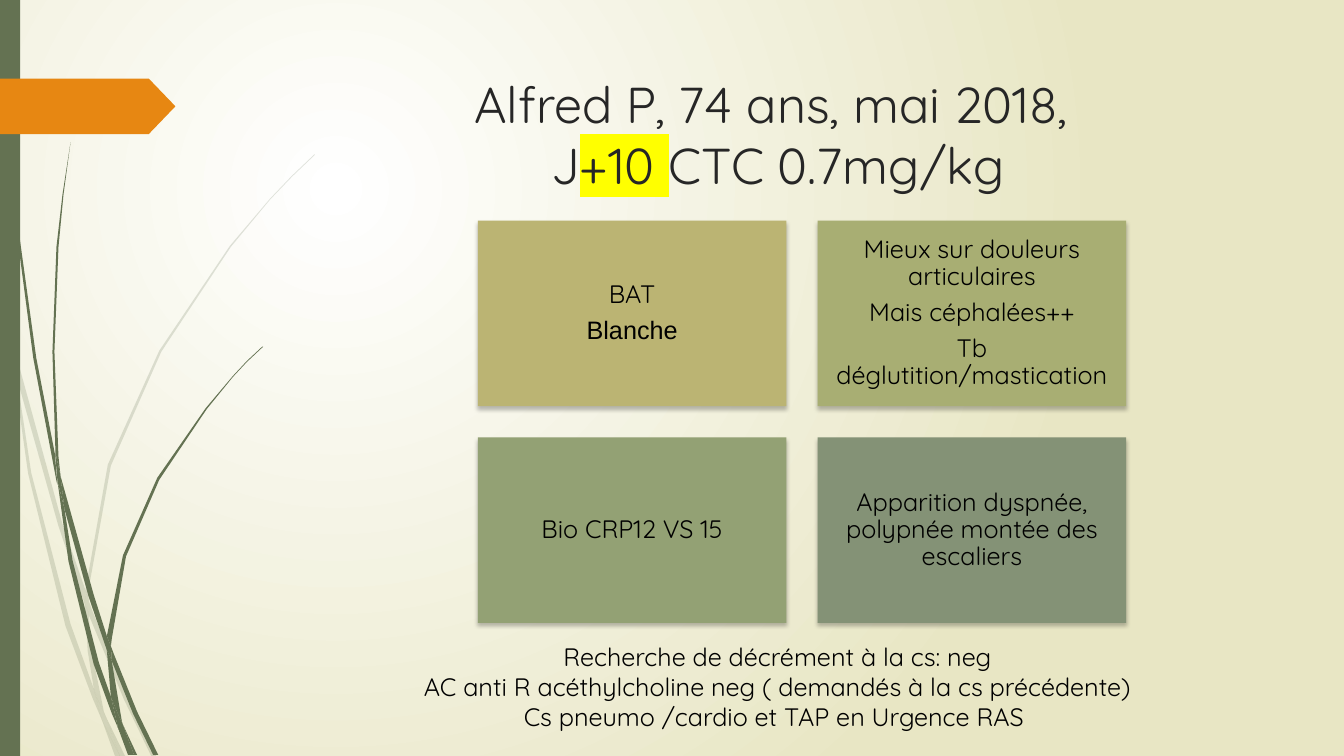
from dataclasses import dataclass

from lxml.etree import SubElement
from pptx import Presentation
from pptx.dml.color import RGBColor
from pptx.enum.shapes import MSO_SHAPE as SHAPE
from pptx.enum.text import MSO_ANCHOR as ANCHOR, MSO_AUTO_SIZE as AUTO, PP_ALIGN as ALIGN
from pptx.oxml.ns import qn
from pptx.util import Inches, Pt

WHITE = RGBColor(0xFF, 0xFF, 0xFF)
CREAM = RGBColor(0xE8, 0xE6, 0xC4)
GREEN = RGBColor(0x64, 0x72, 0x52)
ORANGE = RGBColor(0xE7, 0x87, 0x12)
DARK = RGBColor(0x26, 0x26, 0x26)
BLACK = RGBColor(0x00, 0x00, 0x00)
FONT = "Quicksand"

Outline = list[tuple[float, float]]


@dataclass
class Card:
    color: RGBColor
    lines: list[tuple[str, str]]


@dataclass
class Grass:
    alpha: int
    blades: list[Outline]


PALE_GRASS = Grass(20, [
    [(0.11, 3.5), (0.09, 3.22), (0, 2.82), (0, 2.99), (0.1, 3.44)],
    [(0.58, 5.22), (0.84, 5.99), (0.85, 5.86), (0.62, 5.2), (0.14, 3.45), (0.17, 3.76)],
    [(0.92, 6.07), (0.88, 5.96), (0.88, 6.1), (1.23, 6.94), (1.5, 7.5), (1.55, 7.5),
     (1.27, 6.92)],
    [(1.19, 7.5), (1.24, 7.5), (1.05, 7.11)],
    [(0.93, 6.83), (0.7, 6.19), (0.31, 4.69), (0.17, 3.76), (0.11, 3.5), (0.28, 4.7),
     (0.65, 6.21), (0.92, 6.93), (1.01, 7.14), (0.99, 7.07)],
    [(0.84, 5.99), (0.87, 6.46), (0.93, 6.83), (0.96, 6.92), (1.05, 7.11), (1.03, 7.06),
     (0.91, 6.46), (0.88, 6.1), (0.88, 6.08)],
    [(0.88, 5.84), (1.1, 4.62), (1.6, 3.49), (2.29, 2.45), (2.68, 1.98), (2.9, 1.75),
     (3.12, 1.54), (3.12, 1.53), (2.89, 1.75), (2.68, 1.97), (2.28, 2.44), (1.58, 3.48),
     (1.07, 4.61), (0.85, 5.84), (0.85, 5.86), (0.88, 5.96)],
    [(1.01, 7.14), (1.14, 7.5), (1.19, 7.5)],
    [(0.88, 6.08), (0.88, 6.1), (0.88, 5.96), (0.85, 5.86), (0.84, 5.99)],
    [(0.96, 6.92), (0.93, 6.83), (0.99, 7.07), (1.01, 7.14), (1.19, 7.5), (1.05, 7.11)],
])

DARK_GRASS = Grass(100, [
    [(0.07, 1.1), (0.17, 2.33), (0.33, 3.55), (0.56, 4.77), (0.57, 4.81), (0.55, 4.57),
     (0.55, 4.53), (0.36, 3.55), (0.19, 2.32), (0.08, 1.09), (0.05, 0.48), (0.04, 0),
     (0.03, 0), (0.04, 0.48)],
    [(0.88, 5.92), (1.06, 6.45), (1.06, 6.33), (1.06, 6.31), (0.93, 5.9), (0.6, 4.72),
     (0.64, 5.05)],
    [(1.13, 6.49), (1.1, 6.41), (1.11, 6.56), (1.32, 7.08), (1.52, 7.49), (1.57, 7.49),
     (1.36, 7.06)],
    [(1.1, 6.91), (0.98, 6.57), (0.72, 5.56), (0.64, 5.05), (0.57, 4.77), (0.68, 5.57),
     (0.93, 6.59), (1.11, 7.08), (1.17, 7.22), (1.16, 7.17)],
    [(0.6, 4.72), (0.58, 4.53), (0.54, 3.49), (0.58, 2.45), (0.63, 1.93), (0.7, 1.41),
     (0.62, 1.93), (0.56, 2.45), (0.52, 3.49), (0.55, 4.49)],
    [(1.33, 7.49), (1.36, 7.49), (1.22, 7.19)],
    [(0.57, 4.77), (0.64, 5.05), (0.6, 4.72), (0.55, 4.49), (0.55, 4.53)],
    [(1.11, 6.33), (1.25, 5.52), (1.58, 4.76), (2.05, 4.06), (2.31, 3.74), (2.45, 3.59),
     (2.61, 3.44), (2.6, 3.44), (2.45, 3.58), (2.31, 3.73), (2.04, 4.05), (1.56, 4.74),
     (1.22, 5.51), (1.06, 6.31), (1.1, 6.41)],
    [(1.17, 7.22), (1.27, 7.49), (1.31, 7.49)],
    [(1.06, 6.45), (1.1, 6.91), (1.16, 7.06), (1.22, 7.19), (1.21, 7.16), (1.11, 6.56),
     (1.09, 6.51)],
    [(1.06, 6.45), (1.09, 6.51), (1.11, 6.56), (1.1, 6.41), (1.06, 6.31), (1.06, 6.33)],
    [(1.16, 7.06), (1.1, 6.91), (1.16, 7.17), (1.17, 7.22), (1.3, 7.49), (1.33, 7.49),
     (1.22, 7.19)],
])

CARDS = [
    Card(RGBColor(0xBB, 0xB4, 0x73), [("BAT", FONT), ("Blanche", "Arial")]),
    Card(RGBColor(0xA8, 0xAE, 0x73), [("Mieux sur douleurs articulaires", FONT),
                                      ("Mais céphalées++", FONT),
                                      ("Tb déglutition/mastication", FONT)]),
    Card(RGBColor(0x93, 0xA1, 0x74), [("Bio CRP12 VS 15", FONT)]),
    Card(RGBColor(0x84, 0x92, 0x76), [("Apparition dyspnée, polypnée montée des escaliers", FONT)]),
]

NOTES = [
    "Recherche de décrément à la cs: neg",
    "AC anti R acéthylcholine neg ( demandés à la cs précédente)",
    "Cs pneumo /cardio et TAP en Urgence RAS ",
]


def paint(sp, color: RGBColor, alpha: int = 100) -> None:
    sp.shadow.inherit = False
    sp.line.fill.background()
    sp.fill.solid()
    sp.fill.fore_color.rgb = color
    if alpha < 100:
        srgb = sp.element.spPr.find(".//" + qn("a:srgbClr"))
        SubElement(srgb, qn("a:alpha"), val=str(alpha * 1000))


def add_grass(s, grass: Grass) -> None:
    for blade in grass.blades:
        start, *rest = [(Inches(x), Inches(y)) for x, y in blade]
        builder = s.shapes.build_freeform(*start)
        builder.add_line_segments(rest, close=True)
        paint(builder.convert_to_shape(), GREEN, grass.alpha)


def add_box(s, kind: SHAPE, left: float, top: float, width: float, height: float,
            color: RGBColor):
    sp = s.shapes.add_shape(kind, Inches(left), Inches(top), Inches(width), Inches(height))
    paint(sp, color)
    return sp


def add_text(p, text: str, *, size: float = 18, font: str = FONT,
             color: RGBColor = BLACK, highlight: str = "") -> None:
    p.alignment = ALIGN.CENTER
    r = p.add_run()
    r.text = text
    r.font.size, r.font.name, r.font.color.rgb = Pt(size), font, color
    if highlight:
        latin = p._p.findall(".//" + qn("a:latin"))[-1]
        mark = SubElement(latin.getparent(), qn("a:highlight"))
        SubElement(mark, qn("a:srgbClr"), val=highlight)
        latin.addprevious(mark)


def add_card(s, card: Card, left: float, top: float, width: float, height: float) -> None:
    sp = add_box(s, SHAPE.RECTANGLE, left, top, width, height, card.color)
    shadow = SubElement(sp.element.spPr.find(qn("a:effectLst")), qn("a:outerShdw"),
                        blurRad=str(Pt(3)), dist=str(Pt(2)), dir="5400000", rotWithShape="0")
    SubElement(SubElement(shadow, qn("a:srgbClr"), val="000000"), qn("a:alpha"), val="25000")
    tf = sp.text_frame
    tf.word_wrap = True
    tf.vertical_anchor = ANCHOR.MIDDLE
    tf.margin_left = tf.margin_right = tf.margin_top = tf.margin_bottom = Inches(0.07)
    for i, (text, font) in enumerate(card.lines):
        p = tf.add_paragraph() if i else tf.paragraphs[0]
        p.line_spacing, p.space_after = 0.9, Pt(6.3)
        add_text(p, text, font=font)


def main() -> None:
    prs = Presentation()
    prs.slide_width, prs.slide_height = Inches(13.33), Inches(7.5)
    s = prs.slides.add_slide(prs.slide_layouts[5])

    # Radial background
    fill = s.background.fill
    fill.gradient()
    for stop, color, position in zip(fill.gradient_stops, (WHITE, CREAM), (0, 1)):
        stop.color.rgb, stop.position = color, position
    grad = s.element.find(".//" + qn("a:gradFill"))
    grad.remove(grad.find(qn("a:lin")))
    circle = SubElement(grad, qn("a:path"), path="circle")
    SubElement(circle, qn("a:fillToRect"), l="50000", t="50000", r="100000", b="100000")

    # Grass, side bar and arrow tab
    add_grass(s, PALE_GRASS)
    add_grass(s, DARK_GRASS)
    add_box(s, SHAPE.RECTANGLE, 0, 0, 0.2, 7.5, GREEN)
    tab = add_box(s, SHAPE.PENTAGON, 0, 0.78, 1.74, 0.55, ORANGE)
    tab.adjustments[0] = 0.48

    # Title
    title = s.shapes.title
    title.left, title.top = Inches(2.84), Inches(0.68)
    title.width, title.height = Inches(9.75), Inches(1.4)
    tf = title.text_frame
    tf.auto_size, tf.vertical_anchor, tf.word_wrap = AUTO.NONE, ANCHOR.TOP, True
    p = tf.paragraphs[0]
    add_text(p, "Alfred P, 74 ans, mai 2018, ", size=36, color=DARK)
    p.add_line_break()
    add_text(p, "J", size=36, color=DARK)
    add_text(p, "+10 ", size=36, color=DARK, highlight="FFFF00")
    add_text(p, "CTC 0.7mg/kg", size=36, color=DARK)

    # Two by two cards
    for i, card in enumerate(CARDS):
        row, col = divmod(i, 2)
        add_card(s, card, 4.74 + 3.37 * col, 2.19 + 2.15 * row, 3.06, 1.84)

    # Closing notes
    box = s.shapes.add_textbox(Inches(2.45), Inches(6.31), Inches(10.52), Inches(1.01))
    tf = box.text_frame
    tf.word_wrap, tf.auto_size = True, AUTO.SHAPE_TO_FIT_TEXT
    for i, note in enumerate(NOTES):
        add_text(tf.add_paragraph() if i else tf.paragraphs[0], note)

    prs.save("out.pptx")


if __name__ == "__main__":
    main()
